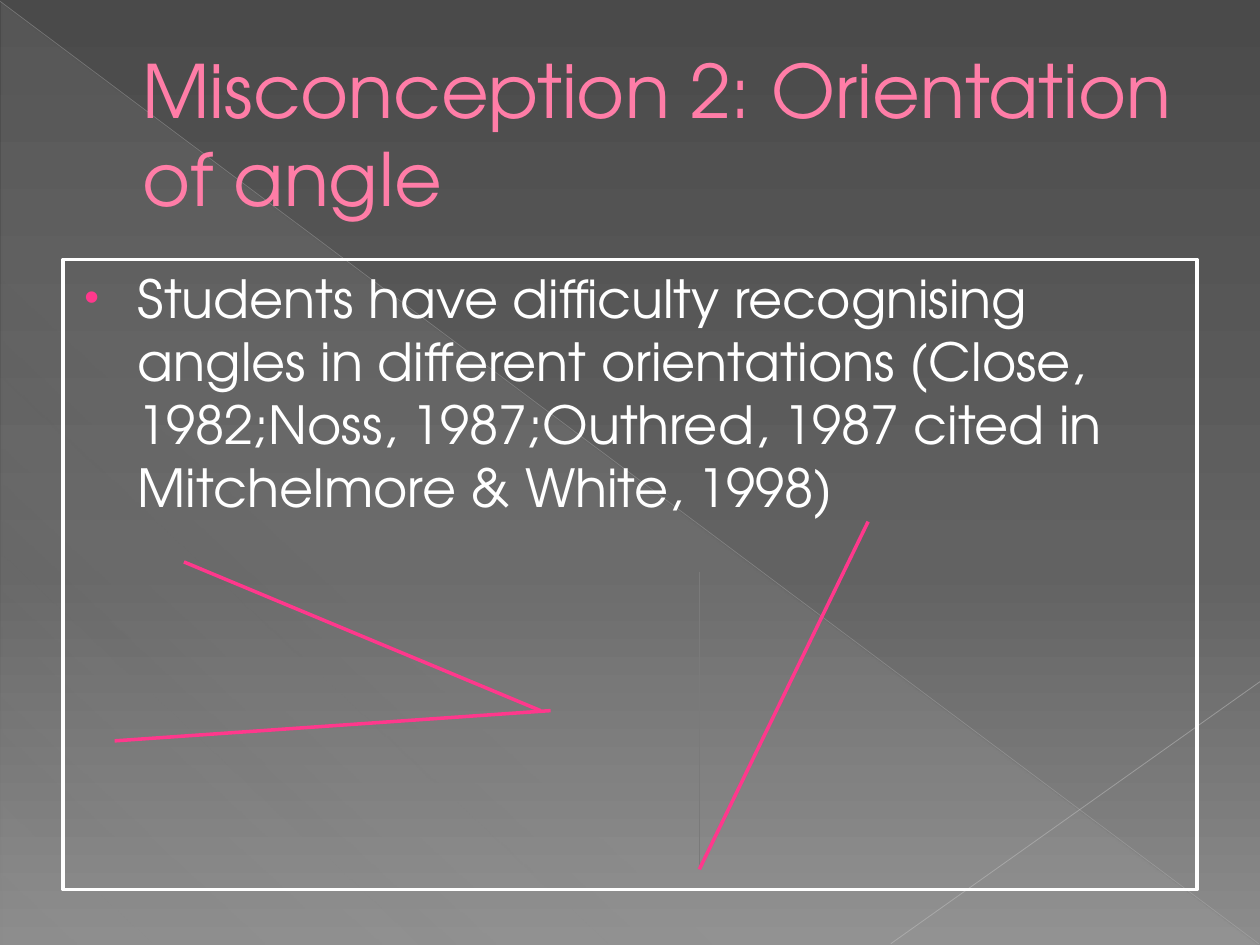
"""Build the slide on the misconception about the orientation of an angle."""
from dataclasses import dataclass

from lxml import etree
from pptx import Presentation
from pptx.dml.color import RGBColor
from pptx.enum.shapes import MSO_CONNECTOR, MSO_SHAPE
from pptx.enum.text import MSO_ANCHOR, MSO_AUTO_SIZE, PP_ALIGN
from pptx.oxml.ns import qn
from pptx.util import Inches, Pt

STRAIGHT = MSO_CONNECTOR.STRAIGHT
RIGHT_TRIANGLE = MSO_SHAPE.RIGHT_TRIANGLE
MIDDLE, TOP = MSO_ANCHOR.MIDDLE, MSO_ANCHOR.TOP
NO_AUTOFIT = MSO_AUTO_SIZE.NONE
LEFT = PP_ALIGN.LEFT

FONT = "TeX Gyre Adventor"
WHITE = RGBColor(0xFF, 0xFF, 0xFF)
PINK = RGBColor(0xFF, 0x38, 0x8C)
TITLE_PINK = RGBColor(0xFF, 0x7D, 0xA7)
CHARCOAL = RGBColor(0x4A, 0x4A, 0x4A)
GREY = RGBColor(0x62, 0x62, 0x62)
ASH = RGBColor(0x8C, 0x8C, 0x8C)
HAZE = RGBColor(0xD2, 0xD2, 0xD2)
SILVER = RGBColor(0xBF, 0xBF, 0xBF)
PALE_SILVER = RGBColor(0xC6, 0xC6, 0xC6)
FAINT_GREY = RGBColor(0x7A, 0x7A, 0x7A)


@dataclass(frozen=True)
class Stop:
    position: int
    color: RGBColor
    opacity: int = 100


@dataclass(frozen=True)
class Stroke:
    start: tuple[float, float]
    end: tuple[float, float]
    color: RGBColor = PINK
    width: float = 2
    opacity: int = 100


BACKDROP_STOPS = [Stop(0, CHARCOAL), Stop(60, GREY), Stop(100, ASH)]
HAZE_STOPS = [Stop(0, HAZE, 10), Stop(70, HAZE, 8), Stop(100, HAZE, 1)]
BACKDROP_STROKES = [
    Stroke((0, 0.01), (9.99, 7.49), SILVER, 0.39, 35),
    Stroke((10, 5.41), (7.07, 7.49), PALE_SILVER, 0.47, 45),
]
ANGLE_STROKES = [
    Stroke((1.46, 4.46), (4.29, 5.64)),
    Stroke((4.37, 5.64), (0.91, 5.88)),
    Stroke((5.55, 4.54), (5.55, 6.9), FAINT_GREY, 0.39),
    Stroke((5.55, 6.9), (6.89, 4.14)),
]


def set_opacity(color_element, opacity: int) -> None:
    if opacity < 100:
        etree.SubElement(color_element, qn("a:alpha"), val=str(opacity * 1000))


def paint_gradient(fill, owner, stops: list[Stop], angle: int) -> None:
    fill.gradient()
    fill.gradient_angle = 360 - angle
    stop_list = owner.find(".//" + qn("a:gsLst"))
    for old_stop in list(stop_list):
        stop_list.remove(old_stop)
    for stop in stops:
        entry = etree.SubElement(stop_list, qn("a:gs"), pos=str(stop.position * 1000))
        color = etree.SubElement(entry, qn("a:srgbClr"), val=str(stop.color))
        set_opacity(color, stop.opacity)


def draw_stroke(page, stroke: Stroke) -> None:
    ends = [Inches(value) for value in stroke.start + stroke.end]
    connector = page.shapes.add_connector(STRAIGHT, *ends)
    connector.line.color.rgb = stroke.color
    connector.line.width = Pt(stroke.width)
    properties = connector.element.spPr
    set_opacity(properties.find(".//" + qn("a:srgbClr")), stroke.opacity)
    etree.SubElement(properties, qn("a:effectLst"))


def draw_backdrop(page) -> None:
    paint_gradient(page.background.fill, page.element, BACKDROP_STOPS, 90)
    triangle = page.shapes.add_shape(
        RIGHT_TRIANGLE, Inches(0.01), Inches(0.02), Inches(9.98), Inches(7.48)
    )
    triangle.shadow.inherit = False
    triangle.line.fill.background()
    paint_gradient(triangle.fill, triangle.element, HAZE_STOPS, 133)
    for stroke in BACKDROP_STROKES:
        draw_stroke(page, stroke)


def fill_placeholder(box, text: str, top: float, height: float, size: int,
                     color: RGBColor, anchor, margin: float, indent: float):
    box.element.getparent().append(box.element)
    box.left, box.top = Inches(0.5), Inches(top)
    box.width, box.height = Inches(9), Inches(height)
    frame = box.text_frame
    frame.word_wrap = True
    frame.auto_size = NO_AUTOFIT
    frame.vertical_anchor = anchor
    para = frame.paragraphs[0]
    para.alignment = LEFT
    properties = para._p.get_or_add_pPr()
    properties.set("marL", str(Inches(margin)))
    properties.set("indent", str(Inches(indent)))
    span = para.add_run()
    span.text = text
    span.font.name = FONT
    span.font.size = Pt(size)
    span.font.color.rgb = color
    return para


def add_bullet(para) -> None:
    properties = para._p.get_or_add_pPr()
    color = etree.SubElement(properties, qn("a:buClr"))
    etree.SubElement(color, qn("a:srgbClr"), val=str(PINK))
    etree.SubElement(properties, qn("a:buSzPct"), val="80000")
    etree.SubElement(properties, qn("a:buFont"), typeface="Arial")
    etree.SubElement(properties, qn("a:buChar"), char="•")


def main() -> None:
    deck = Presentation()
    deck.slide_width, deck.slide_height = Inches(10), Inches(7.5)
    page = deck.slides.add_slide(deck.slide_layouts[1])
    draw_backdrop(page)

    title, body = page.shapes.title, page.placeholders[1]
    fill_placeholder(title, "Misconception 2: Orientation of angle",
                     0.29, 1.53, 42, TITLE_PINK, MIDDLE, 0.53, 0)
    para = fill_placeholder(
        body,
        "Students have difficulty recognising angles in different orientations "
        "(Close, 1982;Noss, 1987;Outhred, 1987 cited in Mitchelmore & White, 1998)",
        2.06, 5, 30, WHITE, TOP, 0.49, -0.42,
    )
    para.space_before = Pt(6)
    add_bullet(para)
    body.line.color.rgb = WHITE
    body.line.width = Pt(2)

    for stroke in ANGLE_STROKES:
        draw_stroke(page, stroke)
    deck.save("out.pptx")


if __name__ == "__main__":
    main()
